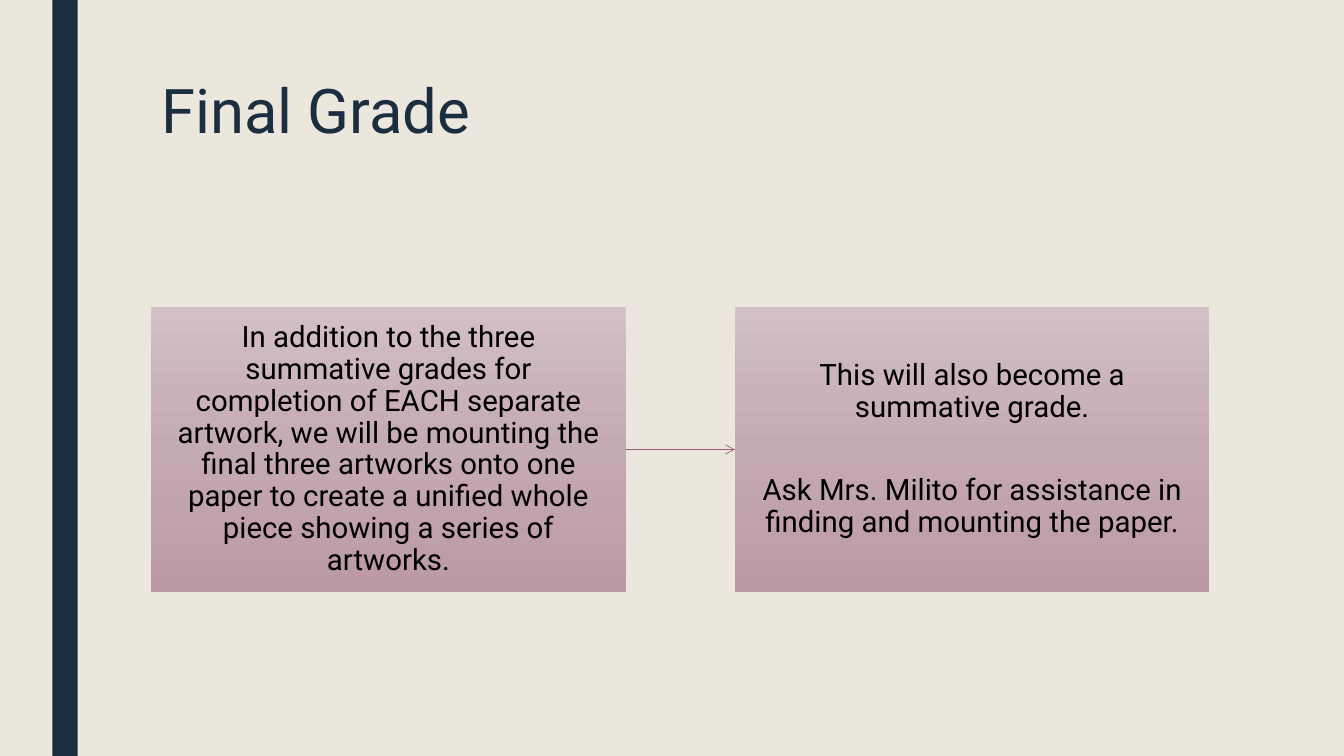
from copy import deepcopy

from lxml import etree
from pptx import Presentation
from pptx.dml.color import RGBColor
from pptx.enum.shapes import MSO_CONNECTOR, MSO_SHAPE
from pptx.enum.text import MSO_ANCHOR, MSO_AUTO_SIZE, PP_ALIGN
from pptx.oxml.ns import qn
from pptx.util import Cm, Pt

RECTANGLE = MSO_SHAPE.RECTANGLE
STRAIGHT = MSO_CONNECTOR.STRAIGHT
TOP, MIDDLE = MSO_ANCHOR.TOP, MSO_ANCHOR.MIDDLE
LEFT, CENTER = PP_ALIGN.LEFT, PP_ALIGN.CENTER
NO_AUTOFIT = MSO_AUTO_SIZE.NONE

FONT = "Roboto"
NAVY = "1A2E40"
CREAM = "EBE7DD"
BLACK = "000000"
ARROW_COLOR = "9A5D78"
BOX_GRADIENT = ((0, "D3BFC7"), (0.5, "C4AAB4"), (1, "BB98A6"))

TITLE_ONLY_LAYOUT = 5
RIGHT_SIDE, LEFT_SIDE = 3, 1
CONTENT_LEFT, CONTENT_WIDTH = 3.81, 26.67
BOX_TOP, BOX_WIDTH, BOX_HEIGHT = 7.74, 11.96, 7.17

BOX_TEXTS = (
    ["In addition to the three summative grades for completion of EACH "
     "separate artwork, we will be mounting the final three artworks onto "
     "one paper to create a unified whole piece showing a series of artworks."],
    ["This will also become a summative grade.",
     "Ask Mrs. Milito for assistance in finding and mounting the paper."],
)


def rgb(color):
    return RGBColor.from_string(color)


def format_paragraph(paragraph, size, color, alignment, line_spacing):
    paragraph.alignment = alignment
    paragraph.line_spacing = line_spacing
    for run in paragraph.runs:
        run.font.name = FONT
        run.font.size = Pt(size)
        run.font.color.rgb = rgb(color)


def add_rectangle(slide, left, top, width, height):
    """Add a rectangle without outline or shadow."""
    shape = slide.shapes.add_shape(
        RECTANGLE, Cm(left), Cm(top), Cm(width), Cm(height))
    shape.shadow.inherit = False
    shape.line.fill.background()
    return shape


def add_side_bar(slide):
    bar = add_rectangle(slide, 1.32, 0, 0.64, 19.05)
    bar.fill.solid()
    bar.fill.fore_color.rgb = rgb(NAVY)


def set_title(slide, text):
    title = slide.shapes.title
    title.left, title.top = Cm(CONTENT_LEFT), Cm(1.9)
    title.width, title.height = Cm(CONTENT_WIDTH), Cm(4.11)
    text_frame = title.text_frame
    text_frame.text = text
    text_frame.vertical_anchor = TOP
    text_frame.auto_size = NO_AUTOFIT
    format_paragraph(text_frame.paragraphs[0], 44, NAVY, LEFT, 0.89)


def fill_gradient(shape, colors):
    """Fill from top to bottom with three (position, colour) stops."""
    shape.fill.gradient()
    shape.fill.gradient_angle = 270
    stop_list = shape._element.spPr.find(".//" + qn("a:gsLst"))
    stop_list.append(deepcopy(stop_list[0]))
    for stop, (position, color) in zip(shape.fill.gradient_stops, colors):
        stop.position = position
        stop.color.rgb = rgb(color)


def add_text_box(slide, left, texts):
    box = add_rectangle(slide, left, BOX_TOP, BOX_WIDTH, BOX_HEIGHT)
    fill_gradient(box, BOX_GRADIENT)
    text_frame = box.text_frame
    text_frame.word_wrap = True
    text_frame.vertical_anchor = MIDDLE
    text_frame.margin_left = text_frame.margin_right = Cm(0.58)
    text_frame.margin_top = text_frame.margin_bottom = Cm(0.61)
    text_frame.text = "\n".join(texts)
    for paragraph in text_frame.paragraphs:
        format_paragraph(paragraph, 21, BLACK, CENTER, 0.9)
    for paragraph in text_frame.paragraphs[1:]:
        paragraph.space_before = Pt(37)
    return box


def add_arrow(slide, source, target):
    arrow = slide.shapes.add_connector(STRAIGHT, 0, 0, 0, 0)
    arrow.begin_connect(source, RIGHT_SIDE)
    arrow.end_connect(target, LEFT_SIDE)
    arrow.line.color.rgb = rgb(ARROW_COLOR)
    arrow.line.width = Pt(0.5)
    etree.SubElement(arrow.line._get_or_add_ln(), qn("a:tailEnd"), type="arrow")
    etree.SubElement(arrow._element.spPr, qn("a:effectLst"))


def main():
    presentation = Presentation()
    presentation.slide_width, presentation.slide_height = Cm(33.87), Cm(19.05)
    layout = presentation.slide_layouts[TITLE_ONLY_LAYOUT]
    slide = presentation.slides.add_slide(layout)
    slide.background.fill.solid()
    slide.background.fill.fore_color.rgb = rgb(CREAM)

    add_side_bar(slide)
    set_title(slide, "Final Grade")
    box_lefts = (CONTENT_LEFT, CONTENT_LEFT + CONTENT_WIDTH - BOX_WIDTH)
    task_box, grade_box = [
        add_text_box(slide, left, texts)
        for left, texts in zip(box_lefts, BOX_TEXTS)]
    add_arrow(slide, task_box, grade_box)

    presentation.save("out.pptx")


if __name__ == "__main__":
    main()
